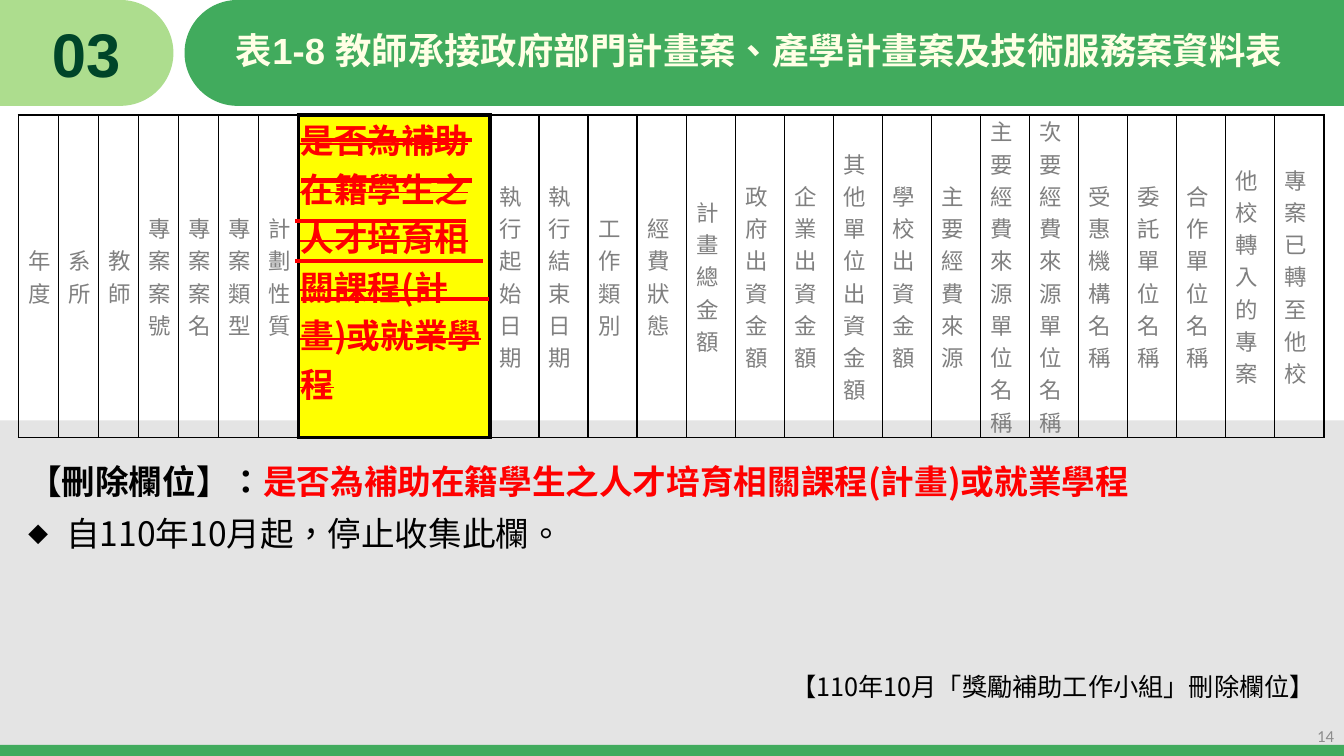
"""Build the slide on the column removed from table 1-8."""
from dataclasses import dataclass
from lxml.etree import SubElement
from pptx import Presentation
from pptx.dml.color import RGBColor
from pptx.enum.lang import MSO_LANGUAGE_ID
from pptx.enum.shapes import MSO_CONNECTOR, MSO_SHAPE
from pptx.enum.text import MSO_ANCHOR, PP_ALIGN
from pptx.oxml.ns import qn
from pptx.util import Inches, Pt

SECTION = "03"
TITLE = "表1-8 教師承接政府部門計畫案、產學計畫案及技術服務案資料表"
REMOVED = "是否為補助在籍學生之人才培育相關課程(計畫)或就業學程"
COLUMNS_BEFORE = ["年度", "系所", "教師", "專案案號", "專案案名", "專案類型", "計劃性質"]
COLUMNS_AFTER = [
    "執行起始日期", "執行結束日期", "工作類別", "經費狀態", "計畫總金額", "政府出資金額",
    "企業出資金額", "其他單位出資金額", "學校出資金額", "主要經費來源", "主要經費來源單位名稱",
    "次要經費來源單位名稱", "受惠機構名稱", "委託單位名稱", "合作單位名稱", "他校轉入的專案",
    "專案已轉至他校",
]
NOTE_LABEL = "【刪除欄位】："
NOTE_BULLET = "自110年10月起，停止收集此欄。"
NOTE_SOURCE = "【110年10月「獎勵補助工作小組」刪除欄位】"
PAGE_NUMBER = "14"


@dataclass(frozen=True)
class Theme:
    green: str = "41AB5D"
    light_green: str = "ADDD8E"
    dark_green: str = "004529"
    cream: str = "FFFFE5"
    panel: str = "BFBFBF"
    black: str = "000000"
    red: str = "FF0000"
    yellow: str = "FFFF00"
    column_gray: str = "808080"
    number_gray: str = "8C8C8C"
    heading_font: str = "Arial"
    body_font: str = "Noto Sans CJK SC"
    number_font: str = "Calibri"
    section_size: int = 44
    title_size: int = 26
    note_size: int = 24
    source_size: int = 18
    column_size: int = 16
    number_size: int = 12


THEME = Theme()
WIDTH, HEIGHT = 13.33, 7.5
MARGIN, CONTENT_WIDTH = 0.18, 12.96
HEADER = CAP = 1.05
PANEL_TOP, FOOTER_TOP = 4.17, 7.39
TABLE_TOP, TABLE_HEIGHT = 1.14, 3.2
NARROW, WIDE, REGULAR = 0.4, 1.91, 0.49
THIN, THICK = 1, 3

BLOCKS = [
    (MSO_SHAPE.RECTANGLE, 0, PANEL_TOP, WIDTH, HEIGHT - PANEL_TOP, THEME.panel),
    (MSO_SHAPE.RECTANGLE, 0, FOOTER_TOP, WIDTH, HEIGHT - FOOTER_TOP, THEME.green),
    (MSO_SHAPE.RECTANGLE, 0, 0, 1.19, HEADER, THEME.light_green),
    (MSO_SHAPE.OVAL, 0.67, 0, CAP, CAP, THEME.light_green),
    (MSO_SHAPE.OVAL, 1.83, 0, CAP, CAP, THEME.green),
    (MSO_SHAPE.RECTANGLE, 2.35, 0, WIDTH - 2.35, HEADER, THEME.green),
]
STRIKE_LINES = [
    (2.99, 4.68, 1.39), (2.99, 4.68, 1.79), (2.93, 4.62, 2.19),
    (2.93, 4.79, 2.59), (2.99, 4.85, 2.97),
]


def inches(*lengths):
    return [Inches(length) for length in lengths]


def format_span(span, size, color, font=THEME.body_font, bold=False):
    span.font.size, span.font.bold, span.font.name = Pt(size), bold, font
    span.font.language_id = MSO_LANGUAGE_ID.TRADITIONAL_CHINESE
    span.font.color.rgb = RGBColor.from_string(color)
    SubElement(span.font._element, qn("a:ea"), typeface=THEME.body_font)


def add_span(para, text, *style, **options):
    span = para.add_run()
    span.text = text
    format_span(span, *style, **options)
    return span


def add_block(slide, kind, left, top, width, height, color):
    block = slide.shapes.add_shape(kind, *inches(left, top, width, height))
    block.shadow.inherit = False
    block.fill.solid()
    block.fill.fore_color.rgb = RGBColor.from_string(color)
    block.line.fill.background()
    return block


def add_box(slide, left, top, width, height, anchor=MSO_ANCHOR.TOP):
    box = slide.shapes.add_textbox(*inches(left, top, width, height))
    box.text_frame.word_wrap = True
    box.text_frame.vertical_anchor = anchor
    return box.text_frame


def add_header(slide):
    title = slide.shapes.title
    slide.shapes._spTree.append(title._element)
    title.left, title.top, title.width, title.height = inches(2.24, 0, 10.9, HEADER)
    title.text_frame.text = TITLE
    title.text_frame.vertical_anchor = MSO_ANCHOR.MIDDLE
    para = title.text_frame.paragraphs[0]
    para.alignment, para.line_spacing = PP_ALIGN.LEFT, 0.9
    format_span(para.runs[0], THEME.title_size, THEME.cream, THEME.heading_font, True)
    para = add_box(slide, 0, 0, 1.71, HEADER, MSO_ANCHOR.MIDDLE).paragraphs[0]
    para.alignment, para.space_before = PP_ALIGN.CENTER, Pt(10)
    add_span(para, SECTION, THEME.section_size, THEME.dark_green, THEME.heading_font, bold=True)


def add_notes_area(slide):
    frame = add_box(slide, MARGIN, 4.48, CONTENT_WIDTH, HEIGHT - 4.48)
    heading, bullet, source = frame.paragraphs[0], frame.add_paragraph(), frame.add_paragraph()
    for para, gap in ((heading, 6), (bullet, 6), (source, 82)):
        para.line_spacing, para.space_before = 1.1, Pt(gap)
    add_span(heading, NOTE_LABEL, THEME.note_size, THEME.black, bold=True)
    add_span(heading, REMOVED, THEME.note_size, THEME.red, bold=True)
    add_span(bullet, NOTE_BULLET, THEME.note_size, THEME.black)
    properties = bullet._p.get_or_add_pPr()
    properties.set("marL", str(Inches(0.38)))
    properties.set("indent", str(-Inches(0.38)))
    SubElement(properties, qn("a:buSzPct"), val="60000")
    SubElement(properties, qn("a:buFont"), typeface=THEME.body_font)
    SubElement(properties, qn("a:buChar"), char="◆")
    source.alignment = PP_ALIGN.RIGHT
    add_span(source, NOTE_SOURCE, THEME.source_size, THEME.black)


def set_borders(cell, left, right, top, bottom):
    properties = cell._tc.get_or_add_tcPr()
    for side, weight in zip("LRTB", (left, right, top, bottom)):
        line = SubElement(properties, qn(f"a:ln{side}"), w=str(Pt(weight)))
        SubElement(SubElement(line, qn("a:solidFill")), qn("a:srgbClr"), val=THEME.black)


def format_removed_cell(cell):
    cell.fill.solid()
    cell.fill.fore_color.rgb = RGBColor.from_string(THEME.yellow)
    span = add_span(cell.text_frame.paragraphs[0], REMOVED, THEME.note_size, THEME.red, bold=True)
    span.font._element.set("strike", "sngStrike")


def format_kept_cell(cell, name):
    cell.fill.background()
    cell.vertical_anchor = MSO_ANCHOR.MIDDLE
    cell._tc.get_or_add_tcPr().set("vert", "eaVert")
    para = cell.text_frame.paragraphs[0]
    para.alignment = PP_ALIGN.JUSTIFY
    para._p.get_or_add_pPr().set("marL", str(Inches(0.08)))
    add_span(para, name, THEME.column_size, THEME.column_gray)


def add_columns_table(slide):
    names = COLUMNS_BEFORE + [REMOVED] + COLUMNS_AFTER
    removed = len(COLUMNS_BEFORE)
    shares = [NARROW] * removed + [WIDE] + [REGULAR] * len(COLUMNS_AFTER)
    table = slide.shapes.add_table(
        1, len(names), *inches(MARGIN, TABLE_TOP, CONTENT_WIDTH, TABLE_HEIGHT)).table
    table.first_row = table.horz_banding = False
    for index, (name, share) in enumerate(zip(names, shares)):
        table.columns[index].width = Inches(CONTENT_WIDTH * share / sum(shares))
        cell = table.cell(0, index)
        cell.margin_left = cell.margin_right = Inches(0.02)
        cell.margin_top = cell.margin_bottom = 0
        left = THICK if index in (removed, removed + 1) else THIN
        right = THICK if index in (removed - 1, removed) else THIN
        edge = THICK if index == removed else THIN
        set_borders(cell, left, right, edge, edge)
        if index == removed:
            format_removed_cell(cell)
        else:
            format_kept_cell(cell, name)


def add_strike_line(slide, start, end, top):
    line = slide.shapes.add_connector(MSO_CONNECTOR.STRAIGHT, *inches(start, top, end, top))
    line.line.color.rgb = RGBColor.from_string(THEME.red)
    line.line.width = Pt(THICK)
    SubElement(line._element.spPr, qn("a:effectLst"))


def main():
    deck = Presentation()
    deck.slide_width, deck.slide_height = inches(WIDTH, HEIGHT)
    slide = deck.slides.add_slide(deck.slide_layouts[5])
    panel, *_ = [add_block(slide, *block) for block in BLOCKS]
    color = panel._element.spPr.find(qn("a:solidFill")).find(qn("a:srgbClr"))
    SubElement(color, qn("a:alpha"), val="41000")
    add_header(slide)
    add_notes_area(slide)
    add_columns_table(slide)
    para = add_box(slide, WIDTH - 3, 7.1, 3, 0.4, MSO_ANCHOR.MIDDLE).paragraphs[0]
    para.alignment = PP_ALIGN.RIGHT
    add_span(para, PAGE_NUMBER, THEME.number_size, THEME.number_gray, THEME.number_font)
    for strike in STRIKE_LINES:
        add_strike_line(slide, *strike)
    deck.save("out.pptx")


if __name__ == "__main__":
    main()
